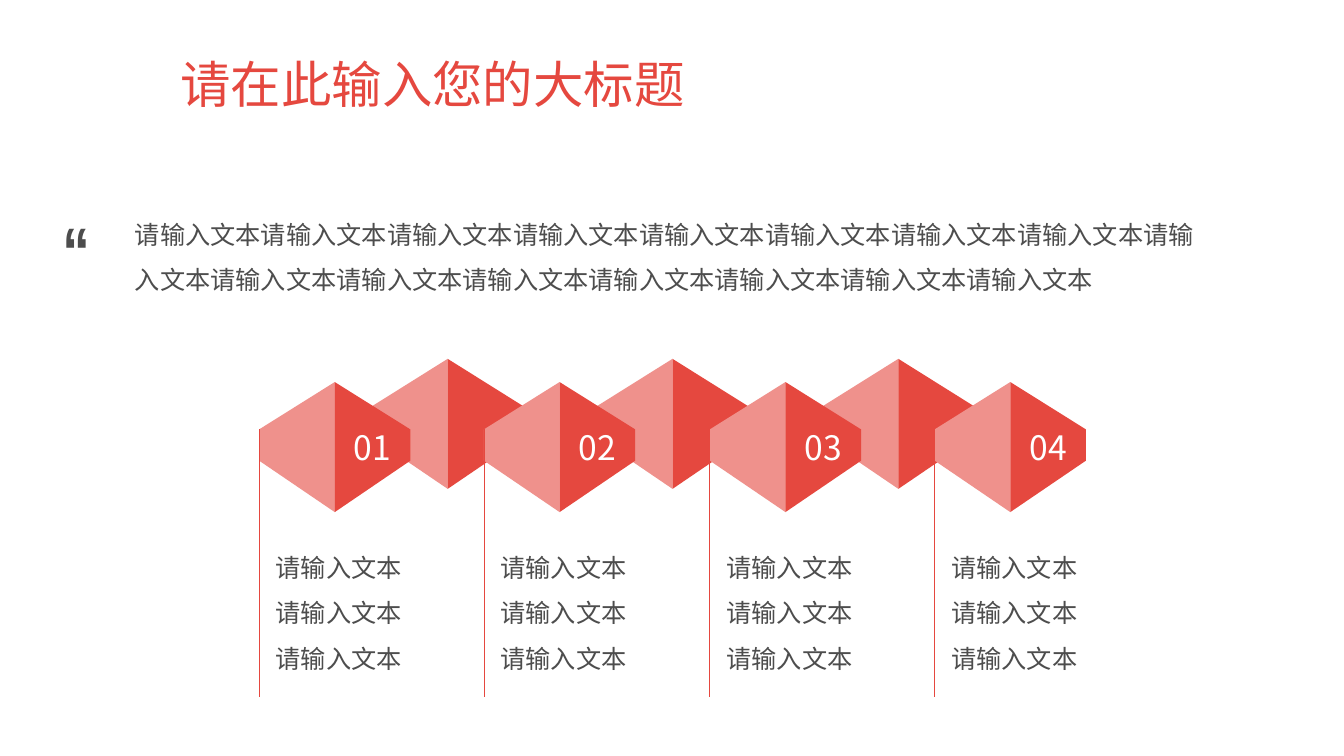
from lxml.etree import SubElement
from pptx import Presentation
from pptx.dml.color import RGBColor
from pptx.enum.shapes import MSO_CONNECTOR
from pptx.enum.text import MSO_ANCHOR, PP_ALIGN
from pptx.oxml.ns import qn
from pptx.util import Pt

PX = 9144  # EMU in one px, 100 px to the inch
COLORS = {"red": "E5483F", "pink": "EF918C", "gray": "4D4D4D", "white": "FFFFFF"}
SANS = "Noto Sans CJK SC"

PLACEHOLDER_TEXT = "请输入文本"
STEP_COUNT = 4
HALF_WIDTH, GEM_HEIGHT = 75, 129
SIDE_TOP, SIDE_BOTTOM = 47, 78
FRONT_TOP, BACK_TOP = 379, 356
BACK_SHIFT = 112


class SlideBuilder:
    def __init__(self, presentation):
        self.slide = presentation.slides.add_slide(presentation.slide_layouts[5])

    def color(self, name):
        return RGBColor.from_string(COLORS[name])

    def fill_text(self, shape, text, size, color, align=PP_ALIGN.LEFT, spacing=1.0,
                  font=SANS, bold=False, anchor=MSO_ANCHOR.MIDDLE):
        frame = shape.text_frame
        frame.word_wrap = True
        frame.vertical_anchor = anchor
        frame.text = text
        paragraph = frame.paragraphs[0]
        paragraph.alignment = align
        paragraph.line_spacing = spacing
        paragraph.font.size = Pt(size)
        paragraph.font.bold = bold
        paragraph.font.name = font
        paragraph.font.color.rgb = self.color(color)
        properties = paragraph._p.get_or_add_pPr().find(qn("a:defRPr"))
        SubElement(properties, qn("a:ea")).set("typeface", font)

    def title(self, text, left, top, width, height):
        shape = self.slide.shapes.title
        shape.left, shape.top = left * PX, top * PX
        shape.width, shape.height = width * PX, height * PX
        self.fill_text(shape, text, 36, "red", spacing=0.9)

    def text(self, text, left, top, width, height, size=18, **style):
        box = self.slide.shapes.add_textbox(left * PX, top * PX, width * PX, height * PX)
        self.fill_text(box, text, size, "gray", **style)

    def line(self, x, top, bottom):
        connector = self.slide.shapes.add_connector(
            MSO_CONNECTOR.STRAIGHT, x * PX, top * PX, x * PX, bottom * PX)
        connector.line.color.rgb = self.color("red")
        connector.line.width = Pt(0.5)
        SubElement(connector._element.spPr, qn("a:effectLst"))

    def gem_half(self, center, side, top, color):
        """Draw the half of a gem between its center line and the given side."""
        builder = self.slide.shapes.build_freeform(side, top + SIDE_TOP, scale=PX)
        builder.add_line_segments([(side, top + SIDE_BOTTOM),
                                   (center, top + GEM_HEIGHT), (center, top)])
        shape = builder.convert_to_shape()
        shape.shadow.inherit = False
        shape.fill.solid()
        shape.fill.fore_color.rgb = self.color(color)
        shape.line.fill.background()
        return shape

    def gem(self, left, top, label=None):
        center = left + HALF_WIDTH
        self.gem_half(center, left, top, "pink")
        dark_half = self.gem_half(center, center + HALF_WIDTH, top, "red")
        if label:
            frame = dark_half.text_frame
            frame.margin_left = frame.margin_right = 7 * PX
            frame.margin_top = frame.margin_bottom = 4 * PX
            self.fill_text(dark_half, label, 24, "white", align=PP_ALIGN.CENTER)


def main():
    presentation = Presentation()
    presentation.slide_width, presentation.slide_height = 1333 * PX, 750 * PX
    builder = SlideBuilder(presentation)
    builder.title("请在此输入您的大标题", 169, 40, 1044, 93)

    step_lefts = [257 + 447 * step // 2 for step in range(STEP_COUNT)]
    for number, left in enumerate(step_lefts, start=1):
        if number < STEP_COUNT:
            builder.gem(left + BACK_SHIFT, BACK_TOP)
        builder.gem(left, FRONT_TOP, f"{number:02}")
    for left in step_lefts:
        builder.line(left, FRONT_TOP + SIDE_TOP, 691)
        builder.text(PLACEHOLDER_TEXT * 3, left + 1, 531, 156, 139,
                     align=PP_ALIGN.CENTER, spacing=1.5)

    builder.text(PLACEHOLDER_TEXT * 16, 124, 181, 1085, 133, spacing=1.5)
    builder.text("“", 52, 202, 70, 91, size=48, font="Arial Narrow", bold=True,
                 anchor=MSO_ANCHOR.TOP)
    presentation.save("out.pptx")


if __name__ == "__main__":
    main()
